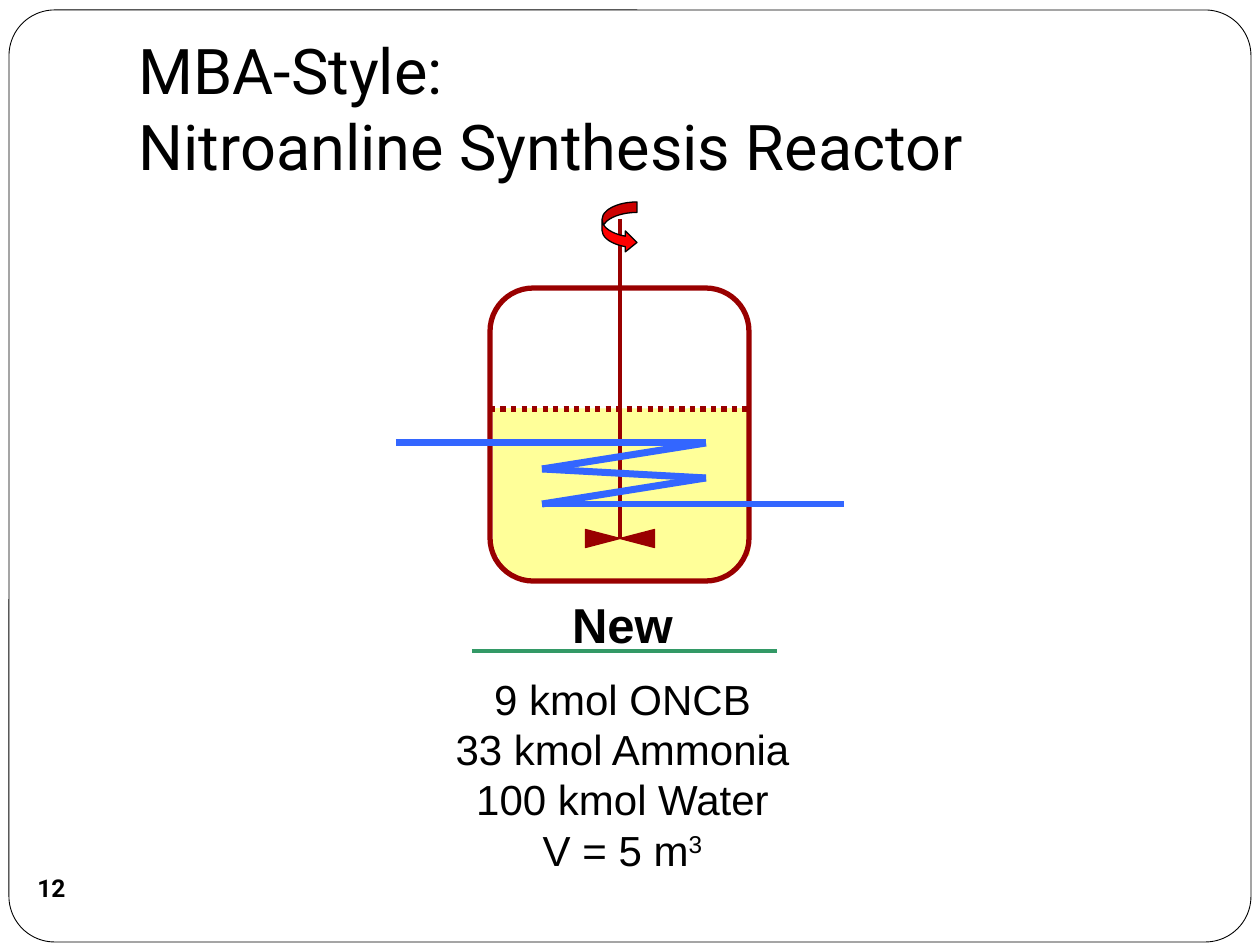
from itertools import pairwise

from lxml.etree import SubElement
from pptx import Presentation
from pptx.dml.color import RGBColor
from pptx.enum.dml import MSO_LINE
from pptx.enum.shapes import MSO_CONNECTOR, MSO_SHAPE
from pptx.enum.text import MSO_ANCHOR, MSO_AUTO_SIZE, PP_ALIGN
from pptx.oxml.ns import qn
from pptx.util import Emu, Pt

BLACK = RGBColor(0x00, 0x00, 0x00)
WHITE = RGBColor(0xFF, 0xFF, 0xFF)
MAROON = RGBColor(0x99, 0x00, 0x00)
YELLOW = RGBColor(0xFF, 0xFF, 0x99)
RED = RGBColor(0xFF, 0x00, 0x00)
BLUE = RGBColor(0x33, 0x66, 0xFF)
GREEN = RGBColor(0x33, 0x99, 0x66)


def px(length):
    return Emu(round(length * 914400 / 126))


class Sketch:
    """Draws styled elements on the current slide, measured in pixels."""

    title_font = "Roboto"
    body_font = "Arial"

    def __init__(self, deck):
        self.page = deck.slides.add_slide(deck.slide_layouts[5])

    def style(self, paragraph, name, size, bold=False, align=PP_ALIGN.CENTER):
        paragraph.alignment = align
        font = paragraph.font
        font.name, font.size, font.bold = name, Pt(size), bold
        font.color.rgb = BLACK

    def title(self, text, left, top, width, height):
        box = self.page.shapes.title
        box.left, box.top, box.width, box.height = map(px, (left, top, width, height))
        frame = box.text_frame
        frame.text = text
        frame.auto_size = MSO_AUTO_SIZE.NONE
        frame.vertical_anchor = MSO_ANCHOR.BOTTOM
        frame.margin_bottom = px(13)
        for paragraph in frame.paragraphs:
            self.style(paragraph, self.title_font, 36, align=PP_ALIGN.LEFT)

    def shape(self, kind, left, top, width, height, fill=None, line=None, weight=0.75, adjust=()):
        shape = self.page.shapes.add_shape(kind, *map(px, (left, top, width, height)))
        shape.shadow.inherit = False
        if fill is None:
            shape.fill.background()
        else:
            shape.fill.solid()
            shape.fill.fore_color.rgb = fill
        if line is None:
            shape.line.fill.background()
        else:
            shape.line.color.rgb = line
            shape.line.width = Pt(weight)
        for index, value in enumerate(adjust):
            shape.adjustments[index] = value
        return shape

    def border(self, *place):
        shape = self.shape(MSO_SHAPE.ROUNDED_RECTANGLE, *place, WHITE, BLACK, 0.5, [0.049])
        self.page.shapes.title._element.addprevious(shape._element)

    def line(self, start, end, color, weight, dash=None):
        line = self.page.shapes.add_connector(MSO_CONNECTOR.STRAIGHT, *map(px, (*start, *end)))
        line.line.color.rgb = color
        line.line.width = Pt(weight)
        if dash:
            line.line.dash_style = dash
        SubElement(line._element.spPr, qn("a:effectLst"))

    def page_number(self, text, *place):
        frame = self.shape(MSO_SHAPE.OVAL, *place).text_frame
        frame.word_wrap = False
        frame.vertical_anchor = MSO_ANCHOR.MIDDLE
        frame.margin_left = frame.margin_right = frame.margin_top = frame.margin_bottom = 0
        frame.text = text
        self.style(frame.paragraphs[0], self.title_font, 14, bold=True)

    def recipe(self, heading, rows, *place):
        frame = self.page.shapes.add_textbox(*map(px, place)).text_frame
        frame.word_wrap = False
        frame.text = heading
        self.style(frame.paragraphs[0], self.body_font, 28, bold=True)
        frame.paragraphs[0].space_after = Pt(11.5)
        for text, power in rows:
            paragraph = frame.add_paragraph()
            self.style(paragraph, self.body_font, 24)
            paragraph.add_run().text = text
            if power:
                span = paragraph.add_run()
                span.text = power
                span.font._element.set("baseline", "30000")


def draw_reactor(sketch):
    left, right, middle, level = 490, 749, 620, 409
    for corner in (689, 494):
        sketch.shape(MSO_SHAPE.RECTANGLE, corner, level, 60, 146, YELLOW, YELLOW)
    sketch.shape(MSO_SHAPE.ROUNDED_RECTANGLE, 499, level, 242, 172, YELLOW, YELLOW)
    sketch.shape(MSO_SHAPE.ROUNDED_RECTANGLE, left, 288, right - left, 293, line=MAROON, weight=3)
    sketch.line((middle, 219), (middle, 538), MAROON, 2.5)
    impeller = sketch.shape(MSO_SHAPE.FLOWCHART_COLLATE, middle - 9, 504, 18, 69, MAROON, MAROON)
    impeller.rotation = 90
    sketch.line((left, level), (right, level), MAROON, 3, MSO_LINE.ROUND_DOT)
    sketch.shape(MSO_SHAPE.CURVED_RIGHT_ARROW, 602, 202, 35, 51, RED, BLACK,
                 adjust=[0.3, 0.6, 0.333])
    coil = [(396, 443), (706, 443), (542, 469), (706, 478), (542, 504), (844, 504)]
    for start, end in pairwise(coil):
        sketch.line(start, end, BLUE, 4)


def main():
    deck = Presentation()
    deck.slide_width, deck.slide_height = px(1260), px(945)
    sketch = Sketch(deck)
    sketch.border(9, 10, 1242, 932)
    sketch.title("MBA-Style:\vNitroanline Synthesis Reactor", 126, 38, 1071, 158)
    sketch.page_number("12", 20, 856, 63, 63)
    rows = [("9 kmol ONCB", ""), ("33 kmol Ammonia", ""), ("100 kmol Water", ""), ("V = 5 m", "3")]
    sketch.recipe("New", rows, 441, 588, 363, 297)
    sketch.line((472, 651), (777, 651), GREEN, 2)
    draw_reactor(sketch)
    deck.save("out.pptx")


if __name__ == "__main__":
    main()
